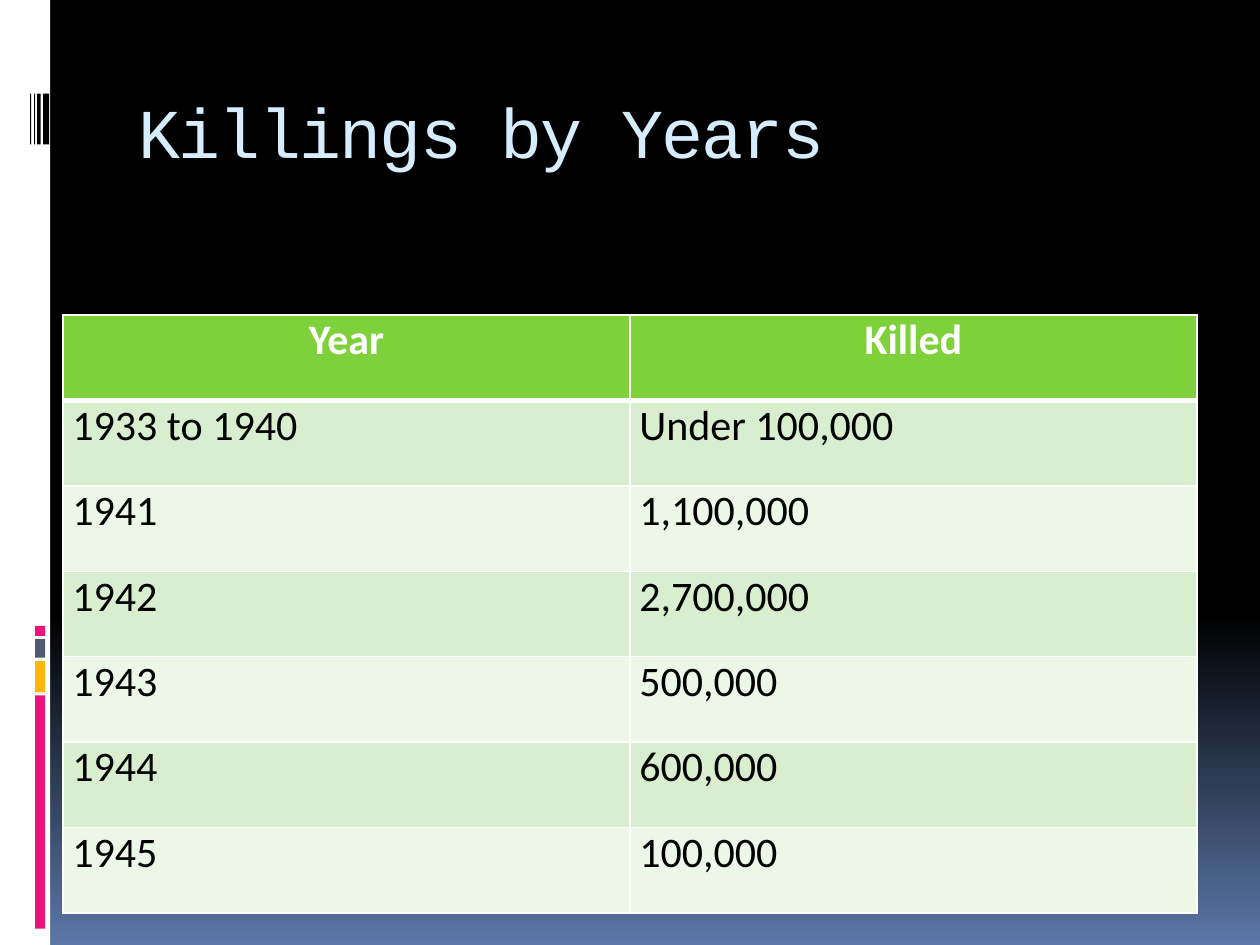
from dataclasses import dataclass

from lxml import etree
from pptx import Presentation
from pptx.dml.color import RGBColor
from pptx.enum.shapes import MSO_SHAPE
from pptx.enum.text import MSO_ANCHOR, PP_ALIGN
from pptx.oxml.ns import qn
from pptx.util import Cm, Pt

RECTANGLE = MSO_SHAPE.RECTANGLE
MIDDLE = MSO_ANCHOR.MIDDLE
LEFT, CENTER = PP_ALIGN.LEFT, PP_ALIGN.CENTER


@dataclass(frozen=True)
class Theme:
    black: str = "000000"
    white: str = "FFFFFF"
    dusk: str = "5B77A8"
    pink: str = "EA157A"
    amber: str = "FEB80A"
    slate: str = "4E5B6F"
    title: str = "D6ECFF"
    header: str = "7FD13B"
    bands: tuple = ("D8EECE", "ECF7E8")
    title_font: str = "Courier New"
    body_font: str = "Calibri"
    title_size: int = 40
    body_size: int = 24


class SlideBuilder:
    """Draws styled elements on the current slide."""

    def __init__(self, slide, theme):
        self.slide = slide
        self.theme = theme

    def background(self):
        fill = self.slide.background.fill
        fill.gradient()
        fill.gradient_angle = 270
        stops = ((0.65, self.theme.black), (1, self.theme.dusk))
        for stop, (position, color) in zip(fill.gradient_stops, stops):
            stop.position = position
            stop.color.rgb = RGBColor.from_string(color)

    def bar(self, left, top, width, height, color):
        bar = self.slide.shapes.add_shape(
            RECTANGLE, Cm(left), Cm(top), Cm(width), Cm(height))
        bar.shadow.inherit = False
        bar.fill.solid()
        bar.fill.fore_color.rgb = RGBColor.from_string(color)
        bar.line.fill.background()

    def run(self, paragraph, text, font, size, color, bold=False):
        run = paragraph.add_run()
        run.text = text
        run.font.name = font
        run.font.size = Pt(size)
        run.font.bold = bold
        run.font.color.rgb = RGBColor.from_string(color)
        return run

    def title(self, text, left, top, width, height):
        theme = self.theme
        box = self.slide.shapes.add_textbox(Cm(left), Cm(top), Cm(width), Cm(height))
        frame = box.text_frame
        frame.word_wrap = True
        frame.vertical_anchor = MIDDLE
        frame.margin_bottom = Cm(0.28)
        run = self.run(frame.paragraphs[0], text, theme.title_font,
                       theme.title_size, theme.title)
        run.font._element.set("spc", "-100")

    def borders(self, cell, bottom):
        properties = cell._tc.get_or_add_tcPr()
        for side, width in (("lnL", 1), ("lnR", 1), ("lnT", 1), ("lnB", bottom)):
            line = etree.SubElement(properties, qn(f"a:{side}"), w=str(Pt(width)))
            fill = etree.SubElement(line, qn("a:solidFill"))
            etree.SubElement(fill, qn("a:srgbClr"), val=self.theme.white)

    def table(self, rows, left, top, width, height):
        theme = self.theme
        table = self.slide.shapes.add_table(
            len(rows), len(rows[0]), Cm(left), Cm(top), Cm(width), Cm(height)).table
        for r, values in enumerate(rows):
            is_header = r == 0
            fill = theme.header if is_header else theme.bands[(r - 1) % 2]
            for c, value in enumerate(values):
                cell = table.cell(r, c)
                cell.margin_left = cell.margin_right = Cm(0.19)
                cell.margin_top = cell.margin_bottom = 0
                self.borders(cell, 3 if is_header else 1)
                cell.fill.solid()
                cell.fill.fore_color.rgb = RGBColor.from_string(fill)
                paragraph = cell.text_frame.paragraphs[0]
                paragraph.alignment = CENTER if is_header else LEFT
                self.run(paragraph, value, theme.body_font, theme.body_size,
                         theme.white if is_header else theme.black, is_header)


def main():
    theme = Theme()
    deck = Presentation()
    deck.slide_width, deck.slide_height = Cm(25.4), Cm(19.05)
    builder = SlideBuilder(deck.slides.add_slide(deck.slide_layouts[6]), theme)

    builder.background()
    builder.bar(0, 0, 1.01, 19.05, theme.white)
    accents = ((14.02, 4.7, theme.pink), (13.33, 0.63, theme.amber),
               (12.88, 0.38, theme.slate), (12.62, 0.2, theme.pink))
    for top, height, color in accents:
        builder.bar(0.71, top, 0.2, height, color)
    for left, width in ((0.87, 0.12), (0.75, 0.07), (0.69, 0.02), (0.61, 0.02)):
        builder.bar(left, 1.89, width, 1.02, theme.black)

    builder.title("Killings by Years", 2.54, 1.43, 21.59, 2.54)
    killings = (
        ("Year", "Killed"),
        ("1933 to 1940", "Under 100,000"),
        ("1941", "1,100,000"),
        ("1942", "2,700,000"),
        ("1943", "500,000"),
        ("1944", "600,000"),
        ("1945", "100,000"),
    )
    builder.table(killings, 1.27, 6.35, 22.86, 12.06)
    deck.save("out.pptx")


if __name__ == "__main__":
    main()
